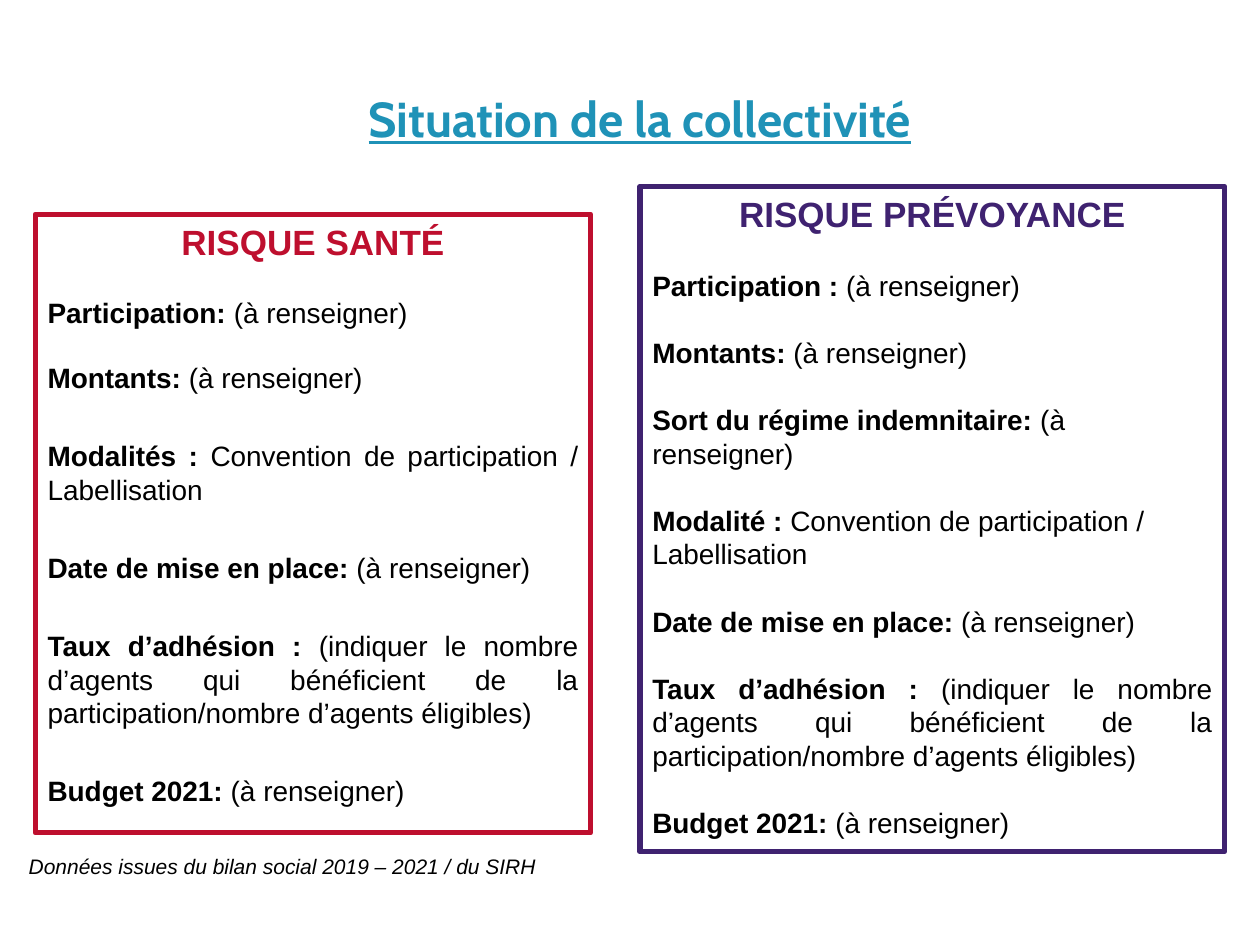
"""Build the slide comparing health and income-protection cover for a local authority."""
from dataclasses import dataclass

import pptx
import pptx.dml.color
import pptx.enum.shapes
import pptx.enum.text
import pptx.util

Cm = pptx.util.Cm
Pt = pptx.util.Pt
Align = pptx.enum.text.PP_ALIGN
Anchor = pptx.enum.text.MSO_ANCHOR


@dataclass(frozen=True)
class Theme:
    """Colours, fonts and type sizes in points."""
    blue: str = "1F92B7"
    red: str = "BE0F2E"
    purple: str = "3F2270"
    black: str = "000000"
    title_font: str = "Cabin"
    body_font: str = "Arial"
    title_size: int = 28
    heading_size: int = 20
    body_size: int = 16
    note_size: int = 12
    border: int = 3
    leading: float = 1.2


class SlideBuilder:
    """Hold the theme and the current slide."""

    def __init__(self, slide, theme):
        self.slide = slide
        self.theme = theme

    def style(self, span, size, color, font=None, bold=False, italic=False, underline=False):
        """Format one run."""
        span.font.name = font or self.theme.body_font
        span.font.size = Pt(size)
        span.font.color.rgb = pptx.dml.color.RGBColor.from_string(color)
        span.font.bold = bold
        span.font.italic = italic
        span.font.underline = underline

    def text(self, area, words, size, color, align, leading=None, **look):
        """Add a text box with one paragraph."""
        box = self.slide.shapes.add_textbox(*map(Cm, area))
        frame = box.text_frame
        frame.word_wrap = True
        frame.vertical_anchor = Anchor.TOP if leading else Anchor.MIDDLE
        frame.text = words
        para = frame.paragraphs[0]
        para.alignment = align
        if leading:
            para.line_spacing = Pt(size * leading)
        self.style(para.runs[0], size, color, **look)

    def panel(self, area, color, heading, entries):
        """Add a bordered panel with a heading and labelled entries."""
        theme = self.theme
        box = self.slide.shapes.add_shape(
            pptx.enum.shapes.MSO_SHAPE.RECTANGLE, *map(Cm, area))
        box.shadow.inherit = False
        box.fill.background()
        box.line.color.rgb = pptx.dml.color.RGBColor.from_string(color)
        box.line.width = Pt(theme.border)
        frame = box.text_frame
        frame.word_wrap = True
        frame.vertical_anchor = Anchor.TOP
        frame.text = heading
        para = frame.paragraphs[0]
        para.alignment = Align.CENTER
        para.line_spacing = Pt(theme.heading_size * theme.leading)
        self.style(para.runs[0], theme.heading_size, color, bold=True)
        for label, value, align, gap in entries:
            para = frame.add_paragraph()
            para.alignment = align
            para.space_before = Pt(gap)
            para.line_spacing = Pt(theme.body_size * theme.leading)
            for words, bold in ((label, True), (value, False)):
                span = para.add_run()
                span.text = words
                self.style(span, theme.body_size, theme.black, bold=bold)


def main():
    """Build and save the deck."""
    theme = Theme()
    deck = pptx.Presentation()
    deck.slide_width, deck.slide_height = Cm(25.4), Cm(19.05)
    page = SlideBuilder(deck.slides.add_slide(deck.slide_layouts[6]), theme)

    pending = "(à renseigner)"
    scheme = "Convention de participation / Labellisation"
    rate = ("(indiquer le nombre d’agents qui bénéficient de la "
            "participation/nombre d’agents éligibles)")
    left, justify = Align.LEFT, Align.JUSTIFY
    wide, line = 25.4, theme.body_size * theme.leading

    page.text((1.47, 1.32, 22.86, 2.11), "Situation de la collectivité",
              theme.title_size, theme.blue, Align.CENTER,
              font=theme.title_font, bold=True, underline=True)
    page.panel((0.71, 4.32, 11.2, 12.47), theme.red, "RISQUE SANTÉ", [
        ("Participation: ", pending, left, 19),
        ("Montants: ", pending, left, 18),
        ("Modalités : ", scheme, justify, wide),
        ("Date de mise en place: ", pending, left, wide),
        ("Taux d’adhésion : ", rate, justify, wide),
        ("Budget 2021: ", pending, justify, wide),
    ])
    page.panel((12.9, 3.76, 11.79, 13.41), theme.purple, "RISQUE PRÉVOYANCE", [
        ("Participation : ", pending, left, line),
        ("Montants: ", pending, left, line),
        ("Sort du régime indemnitaire: ", pending, left, line),
        ("Modalité : ", scheme, left, line),
        ("Date de mise en place: ", pending, justify, line),
        ("Taux d’adhésion : ", rate, justify, line),
        ("Budget 2021: ", pending, justify, line),
    ])
    page.text((0.33, 17.09, 20.22, 0.76),
              "Données issues du bilan social 2019 – 2021 / du SIRH",
              theme.note_size, theme.black, left, theme.leading, italic=True)
    deck.save("out.pptx")


if __name__ == "__main__":
    main()
